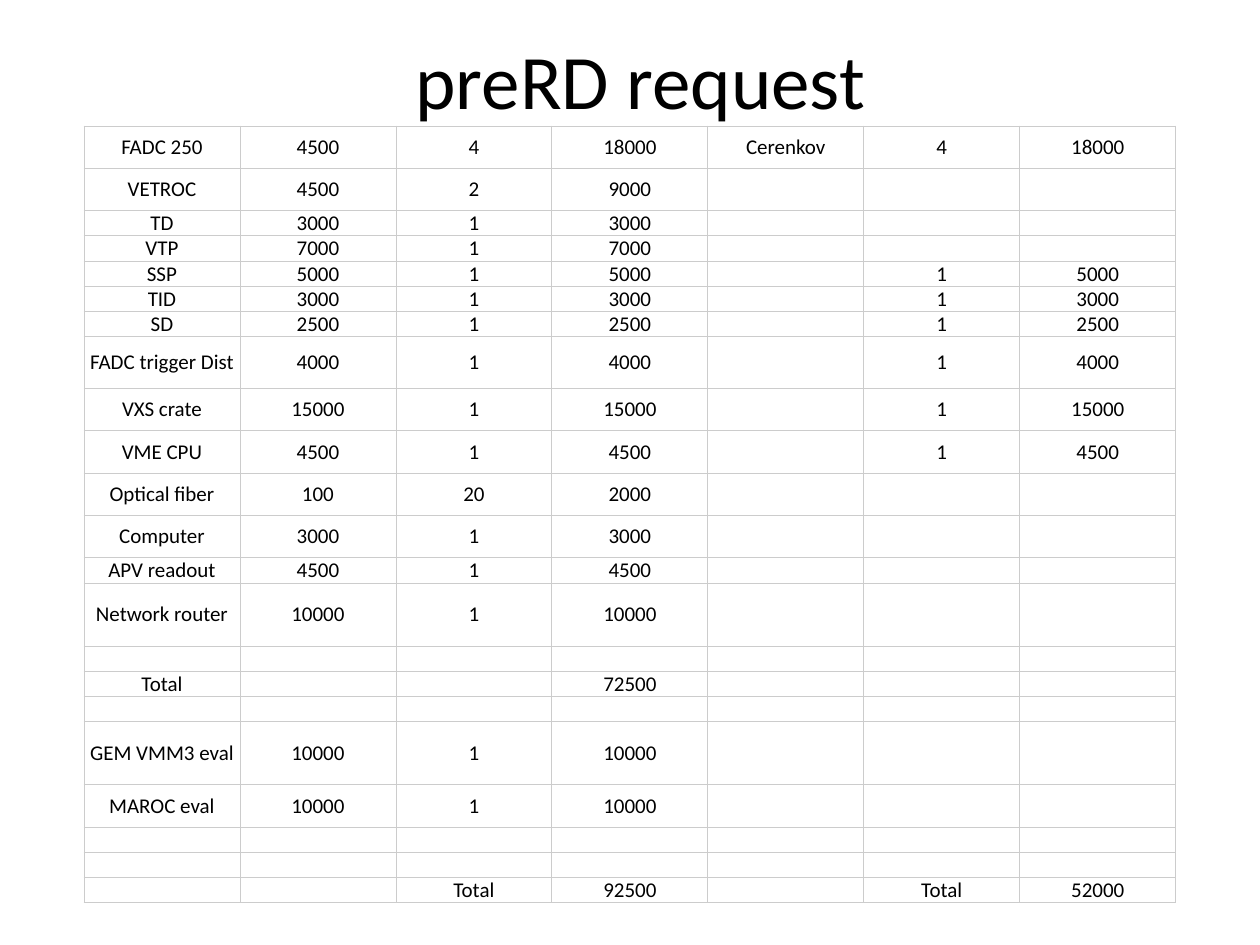
import pptx
import pptx.dml.color
import pptx.enum.text
import pptx.oxml
import pptx.oxml.ns
import pptx.util

Pt = pptx.util.Pt
MIDDLE = pptx.enum.text.MSO_ANCHOR.MIDDLE
CENTER = pptx.enum.text.PP_ALIGN.CENTER
SHORT, TALL, TALLER, TALLEST = 13.7, 24.2, 29.5, 36

ROWS = [
    (TALL, "FADC 250", "4500", "4", "18000", "Cerenkov", "4", "18000"),
    (TALL, "VETROC", "4500", "2", "9000"),
    (SHORT, "TD", "3000", "1", "3000"),
    (SHORT, "VTP", "7000", "1", "7000"),
    (SHORT, "SSP", "5000", "1", "5000", "", "1", "5000"),
    (SHORT, "TID", "3000", "1", "3000", "", "1", "3000"),
    (SHORT, "SD", "2500", "1", "2500", "", "1", "2500"),
    (TALLER, "FADC trigger Dist", "4000", "1", "4000", "", "1", "4000"),
    (TALL, "VXS crate", "15000", "1", "15000", "", "1", "15000"),
    (TALL, "VME CPU", "4500", "1", "4500", "", "1", "4500"),
    (TALL, "Optical fiber", "100", "20", "2000"),
    (TALL, "Computer", "3000", "1", "3000"),
    (SHORT, "APV readout", "4500", "1", "4500"),
    (TALLEST, "Network router", "10000", "1", "10000"),
    (SHORT,),
    (SHORT, "Total", "", "", "72500"),
    (SHORT,),
    (TALLEST, "GEM VMM3 eval", "10000", "1", "10000"),
    (TALL, "MAROC eval", "10000", "1", "10000"),
    (SHORT,),
    (SHORT,),
    (SHORT, "", "", "Total", "92500", "", "Total", "52000"),
]


def color(code):
    return pptx.dml.color.RGBColor.from_string(code)


def apply(item, values):
    for name, value in values.items():
        setattr(item, name, value)


class Deck:
    """Hold the style and the current slide, and draw each kind of element."""

    face, ink, rule = "Calibri", "000000", "CCCCCC"

    def __init__(self, slide):
        self.slide = slide

    def label(self, para, text, size):
        para.alignment = CENTER
        if text:
            run = para.add_run()
            run.text = text
            apply(run.font, {"name": self.face, "size": Pt(size)})
            run.font.color.rgb = color(self.ink)
        else:
            para._p.append(pptx.oxml.parse_xml(
                f'<a:endParaRPr {pptx.oxml.ns.nsdecls("a")} sz="{size * 100}">'
                f'<a:latin typeface="{self.face}"/></a:endParaRPr>'))

    def title(self, text, left, top, width, height, size):
        box = self.slide.shapes.add_textbox(Pt(left), Pt(top), Pt(width), Pt(height))
        apply(box.text_frame, {"word_wrap": True, "vertical_anchor": MIDDLE})
        self.label(box.text_frame.paragraphs[0], text, size)

    def border(self, cell, weight):
        props = cell._tc.get_or_add_tcPr()
        for side in "LRTB":
            props.append(pptx.oxml.parse_xml(
                f'<a:ln{side} {pptx.oxml.ns.nsdecls("a")} w="{Pt(weight)}">'
                f'<a:solidFill><a:srgbClr val="{self.rule}"/></a:solidFill></a:ln{side}>'))

    def table(self, rows, left, top, width, count, size):
        total = sum(row[0] for row in rows)
        grid = self.slide.shapes.add_table(
            len(rows), count, Pt(left), Pt(top), Pt(width), Pt(total)).table
        apply(grid, {"first_row": False, "horz_banding": False})
        for column in grid.columns:
            column.width = Pt(width / count)
        look = {"vertical_anchor": MIDDLE, "margin_left": Pt(0.72),
                "margin_right": Pt(0.72), "margin_top": 0, "margin_bottom": 0}
        for line, (height, *texts) in zip(grid.rows, rows):
            line.height = Pt(height)
            texts += [""] * (count - len(texts))
            for cell, text in zip(line.cells, texts):
                apply(cell, look)
                self.border(cell, 0.5)
                cell.fill.background()
                self.label(cell.text_frame.paragraphs[0], text, size)


def main():
    show = pptx.Presentation()
    apply(show, {"slide_width": Pt(720), "slide_height": Pt(540)})
    deck = Deck(show.slides.add_slide(show.slide_layouts[6]))
    deck.title("preRD request", 42, 0, 648, 90, 44)
    deck.table(ROWS, 48, 72, 624, 7, 12)
    show.save("out.pptx")


if __name__ == "__main__":
    main()
